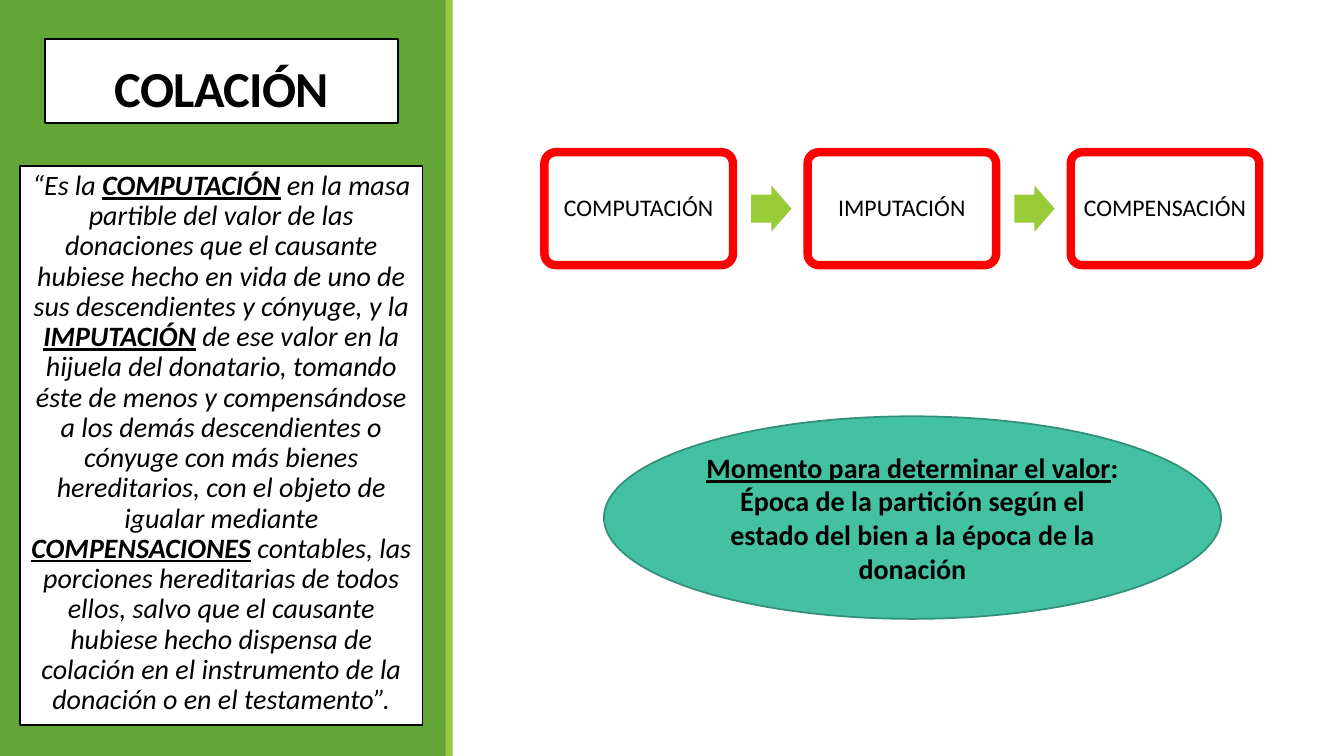
"""Build the slide on collation: its definition, its three steps and the valuation date."""
from dataclasses import dataclass

import pptx
import pptx.dml.color
import pptx.enum.shapes
import pptx.enum.text
import pptx.util

Inches = pptx.util.Inches
Pt = pptx.util.Pt
SHAPE = pptx.enum.shapes.MSO_SHAPE
ANCHOR = pptx.enum.text.MSO_ANCHOR

COLORS = {
    "white": "FFFFFF",
    "black": "000000",
    "green": "63A537",
    "lime": "99CB38",
    "red": "FF0000",
    "teal": "44C1A3",
    "dark_teal": "328F79",
}


@dataclass(frozen=True)
class Box:
    """Place and look of one shape."""

    left: float
    top: float
    width: float
    height: float
    fill: str
    line: str | None = None
    weight: float = 1.25
    kind: SHAPE = SHAPE.RECTANGLE
    adjustments: tuple[float, ...] = ()


@dataclass(frozen=True)
class Span:
    """Piece of text with its emphasis."""

    text: str
    bold: bool = False
    italic: bool = False
    underline: bool = False


SIDEBAR = Box(0, 0, 4.43, 7.5, "green")
SIDEBAR_EDGE = Box(4.42, 0, 0.07, 7.5, "lime")
TITLE = Box(0.45, 0.39, 3.5, 0.83, "white", "black")
DEFINITION = Box(0.2, 1.65, 3.99, 5.54, "white", "black")
MOMENT = Box(5.99, 4.13, 6.12, 2.01, "teal", "dark_teal", kind=SHAPE.OVAL)

STEPS = ("COMPUTACIÓN", "IMPUTACIÓN", "COMPENSACIÓN")
STEP_LEFT, STEP_PITCH, ARROW_OFFSET = 5.4, 2.61, 2.05

DEFINITION_TEXT = (
    "“Es la ",
    "COMPUTACIÓN",
    " en la masa partible del valor de las donaciones que el causante hubiese hecho "
    "en vida de uno de sus descendientes y cónyuge, y la ",
    "IMPUTACIÓN",
    " de ese valor en la hijuela del donatario, tomando éste de menos y compensándose "
    "a los demás descendientes o cónyuge con más bienes hereditarios, con el objeto de "
    "igualar mediante ",
    "COMPENSACIONES",
    " contables, las porciones hereditarias de todos ellos, salvo que el causante "
    "hubiese hecho dispensa de colación en el instrumento de la donación o en el "
    "testamento”.",
)
MOMENT_TEXT = (
    (Span("Momento para determinar el valor", bold=True, underline=True), Span(": ", bold=True)),
    (Span("Época de la partición según el estado del bien a la época de la donación", bold=True),),
)


def rgb(name: str) -> pptx.dml.color.RGBColor:
    """Return a named colour."""
    return pptx.dml.color.RGBColor.from_string(COLORS[name])


def style(sp, box: Box) -> None:
    """Apply the place, fill and line of a box."""
    sp.left, sp.top = Inches(box.left), Inches(box.top)
    sp.width, sp.height = Inches(box.width), Inches(box.height)
    sp.fill.solid()
    sp.fill.fore_color.rgb = rgb(box.fill)
    if box.line:
        sp.line.color.rgb = rgb(box.line)
        sp.line.width = Pt(box.weight)
    else:
        sp.line.fill.background()


def add_box(s: pptx.slide.Slide, box: Box):
    """Add a preset shape described by a box."""
    sp = s.shapes.add_shape(box.kind, 0, 0, 0, 0)
    sp.shadow.inherit = False
    style(sp, box)
    for i, value in enumerate(box.adjustments):
        sp.adjustments[i] = value
    return sp


def write(sp, paragraphs, size: float, anchor: ANCHOR, spacing: float = 1.0) -> None:
    """Write centred paragraphs made of spans."""
    tf = sp.text_frame
    tf.word_wrap = True
    tf.auto_size = pptx.enum.text.MSO_AUTO_SIZE.NONE
    tf.vertical_anchor = anchor
    for i, spans in enumerate(paragraphs):
        p = tf.add_paragraph() if i else tf.paragraphs[0]
        p.alignment = pptx.enum.text.PP_ALIGN.CENTER
        p.line_spacing = spacing
        for span in spans:
            r = p.add_run()
            r.text = span.text
            r.font.name = "Calibri"
            r.font.size = Pt(size)
            r.font.color.rgb = rgb("black")
            r.font.bold, r.font.italic = span.bold, span.italic
            r.font.underline = span.underline


def add_title(s: pptx.slide.Slide) -> None:
    """Format the title and put the sidebar behind it."""
    title = s.shapes.title
    for box in (SIDEBAR, SIDEBAR_EDGE):
        title.element.addprevious(add_box(s, box).element)
    style(title, TITLE)
    write(title, [[Span("COLACIÓN", bold=True)]], 36, ANCHOR.BOTTOM, 0.85)
    title.text_frame.paragraphs[0].runs[0].font.element.set("spc", "-50") if hasattr(
        title.text_frame.paragraphs[0].runs[0].font, "element"
    ) else title.element.xpath(".//a:rPr")[0].set("spc", "-50")


def add_steps(s: pptx.slide.Slide) -> None:
    """Draw the steps with an arrow between neighbours."""
    for i, label in enumerate(STEPS):
        left = STEP_LEFT + i * STEP_PITCH
        step = Box(left, 1.51, 1.87, 1.12, "white", "red", 6, SHAPE.ROUNDED_RECTANGLE, (0.1,))
        sp = add_box(s, step)
        sp.text_frame.margin_left = sp.text_frame.margin_right = Inches(0.07)
        write(sp, [[Span(label)]], 17, ANCHOR.MIDDLE, 0.9)
        if i < len(STEPS) - 1:
            add_box(s, Box(left + ARROW_OFFSET, 1.84, 0.4, 0.46, "lime",
                           kind=SHAPE.RIGHT_ARROW, adjustments=(0.6, 0.5)))


def main() -> None:
    """Create and save the presentation."""
    prs = pptx.Presentation()
    prs.slide_width, prs.slide_height = Inches(13.33), Inches(7.5)
    s = prs.slides.add_slide(prs.slide_layouts[5])
    add_title(s)
    add_steps(s)
    spans = [Span(text, bool(i % 2), True, bool(i % 2)) for i, text in enumerate(DEFINITION_TEXT)]
    write(add_box(s, DEFINITION), [spans], 20, ANCHOR.TOP, 0.9)
    write(add_box(s, MOMENT), MOMENT_TEXT, 20, ANCHOR.MIDDLE)
    prs.save("out.pptx")


if __name__ == "__main__":
    main()
